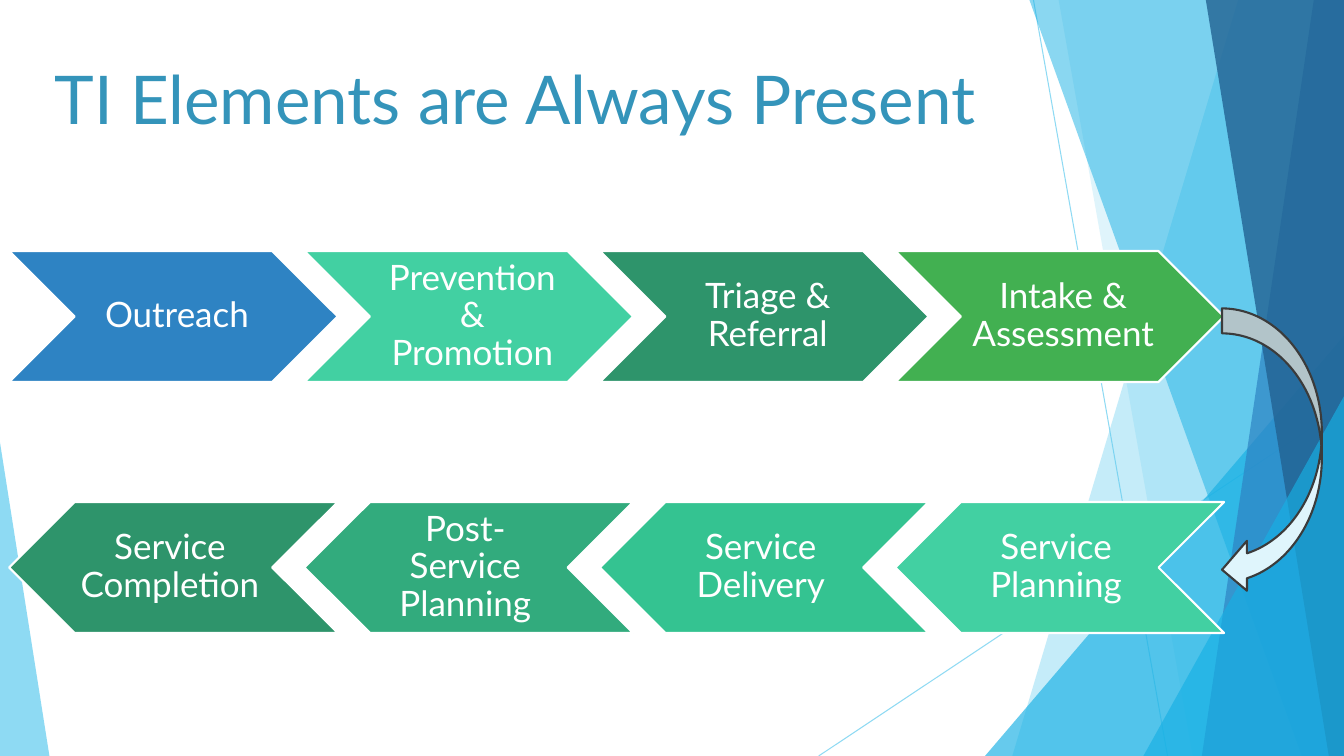
from lxml import etree
from pptx import Presentation
from pptx.dml.color import RGBColor
from pptx.enum import shapes, text
from pptx.oxml import ns
from pptx.util import Inches, Pt

FONT = "Lato"
WHITE = RGBColor(0xFF, 0xFF, 0xFF)
TITLE_BLUE = RGBColor(0x34, 0x94, 0xBA)
SKY = RGBColor(0x5F, 0xCB, 0xEF)
CYAN = RGBColor(0x17, 0xB0, 0xE4)
BLUE = RGBColor(0x2E, 0x83, 0xC3)
NAVY = RGBColor(0x22, 0x62, 0x92)
MINT = RGBColor(0x42, 0xD0, 0xA2)
TEAL = RGBColor(0x34, 0xC3, 0x91)
JADE = RGBColor(0x32, 0xAB, 0x7D)
FOREST = RGBColor(0x2E, 0x94, 0x6B)
GREEN = RGBColor(0x42, 0xB0, 0x51)
ICE = RGBColor(0xDF, 0xF5, 0xFC)
CHARCOAL = RGBColor(0x3B, 0x3B, 0x3B)

WIDTH, HEIGHT = 13.33, 7.5
STEP_PITCH, STEP_WIDTH, STEP_HEIGHT = 2.93, 3.26, 1.3
INTAKE_STEPS = [
    ("Outreach", BLUE),
    ("Prevention & Promotion", MINT),
    ("Triage & Referral", FOREST),
    ("Intake & Assessment", GREEN),
]
SERVICE_STEPS = [
    ("Service Completion", FOREST),
    ("Post-Service Planning", JADE),
    ("Service Delivery", TEAL),
    ("Service Planning", MINT),
]


def set_alpha(element, percent):
    color = element.find(".//" + ns.qn("a:srgbClr"))
    etree.SubElement(color, ns.qn("a:alpha")).set("val", str(percent * 1000))


def style(shape, fill, line=None, alpha=None):
    shape.shadow.inherit = False
    shape.fill.solid()
    shape.fill.fore_color.rgb = fill
    if alpha:
        set_alpha(shape._element.spPr, alpha)
    if line is None:
        shape.line.fill.background()
    else:
        shape.line.color.rgb = line
        shape.line.width = Pt(1.5)


def write(frame, words, size, color, align, anchor, spacing=1.0,
          margins=(0.1, 0.05, 0.1, 0.05)):
    frame.word_wrap = True
    frame.auto_size = text.MSO_AUTO_SIZE.NONE
    frame.vertical_anchor = anchor
    (frame.margin_left, frame.margin_top,
     frame.margin_right, frame.margin_bottom) = map(Inches, margins)
    paragraph = frame.paragraphs[0]
    paragraph.alignment = align
    paragraph.line_spacing = spacing
    run = paragraph.add_run()
    run.text = words
    run.font.name = FONT
    run.font.size = Pt(size)
    run.font.color.rgb = color


def add_ray(slide, start, end):
    ray = slide.shapes.add_connector(
        shapes.MSO_CONNECTOR.STRAIGHT, *map(Inches, start + end))
    ray.line.color.rgb = SKY
    ray.line.width = Pt(0.75)
    spPr = ray._element.spPr
    set_alpha(spPr, 70)
    etree.SubElement(spPr, ns.qn("a:effectLst"))


def add_band(slide, top_x, bottom_x, color, alpha):
    builder = slide.shapes.build_freeform(Inches(top_x), 0)
    corners = [(WIDTH, 0), (WIDTH, HEIGHT), (bottom_x, HEIGHT)]
    builder.add_line_segments([(Inches(x), Inches(y)) for x, y in corners])
    style(builder.convert_to_shape(), color, alpha=alpha)


def add_wedge(slide, left, top, width, apex, color, alpha):
    wedge = slide.shapes.add_shape(
        shapes.MSO_SHAPE.ISOSCELES_TRIANGLE,
        *map(Inches, (left, top, width, HEIGHT - top)))
    wedge.adjustments[0] = apex
    style(wedge, color, alpha=alpha)


def add_backdrop(slide):
    add_ray(slide, (10.25, 0), (11.58, HEIGHT))
    add_ray(slide, (WIDTH, 4.03), (8.12, HEIGHT))
    add_band(slide, 12.28, 10.04, SKY, 36)
    add_band(slide, 10.5, 11.83, SKY, 20)
    add_wedge(slide, 9.77, 3.33, 3.56, 1, CYAN, 66)
    add_band(slide, 10.21, 12.91, CYAN, 50)
    add_band(slide, 13.03, 11.92, BLUE, 70)
    add_band(slide, 11.96, 13.18, NAVY, 80)
    add_wedge(slide, 11.34, 3.93, 1.99, 1, CYAN, 66)
    add_wedge(slide, 0, 4.39, 0.49, 0, SKY, 70)


def add_title(slide, left, top, width, height):
    title = slide.shapes.title
    title.left, title.top, title.width, title.height = map(
        Inches, (left, top, width, height))
    write(title.text_frame, "TI Elements are Always Present", size=48,
          color=TITLE_BLUE, align=text.PP_ALIGN.LEFT,
          anchor=text.MSO_ANCHOR.TOP)


def add_step_row(slide, left, top, steps, leftward=False):
    notch = STEP_HEIGHT / 2
    margins = (0.04, 0.04, 0.11, 0.04) if leftward else (0.11, 0.04, 0.04, 0.04)
    for index, (name, color) in enumerate(steps):
        x = left + index * STEP_PITCH
        chevron = slide.shapes.add_shape(
            shapes.MSO_SHAPE.CHEVRON,
            *map(Inches, (x, top, STEP_WIDTH, STEP_HEIGHT)))
        chevron.rotation = 180 if leftward else 0
        style(chevron, color, line=WHITE)
        label = slide.shapes.add_textbox(
            *map(Inches, (x + notch, top, STEP_WIDTH - 2 * notch, STEP_HEIGHT)))
        write(label.text_frame, name, size=25, color=WHITE,
              align=text.PP_ALIGN.CENTER, anchor=text.MSO_ANCHOR.MIDDLE,
              spacing=0.9, margins=margins)


def add_turn_arrow(slide, left, top, width, height):
    arrow = slide.shapes.add_shape(
        shapes.MSO_SHAPE.CURVED_LEFT_ARROW,
        *map(Inches, (left, top, width, height)))
    style(arrow, ICE, line=CHARCOAL)


def main():
    deck = Presentation()
    deck.slide_width, deck.slide_height = Inches(WIDTH), Inches(HEIGHT)
    slide = deck.slides.add_slide(deck.slide_layouts[5])
    add_backdrop(slide)
    add_title(slide, 0.44, 0.52, 10.93, 1.44)
    add_step_row(slide, 0.09, 2.49, INTAKE_STEPS)
    add_step_row(slide, 0.09, 4.98, SERVICE_STEPS, leftward=True)
    add_turn_arrow(slide, 12.12, 3.06, 0.99, 2.84)
    deck.save("out.pptx")


if __name__ == "__main__":
    main()
